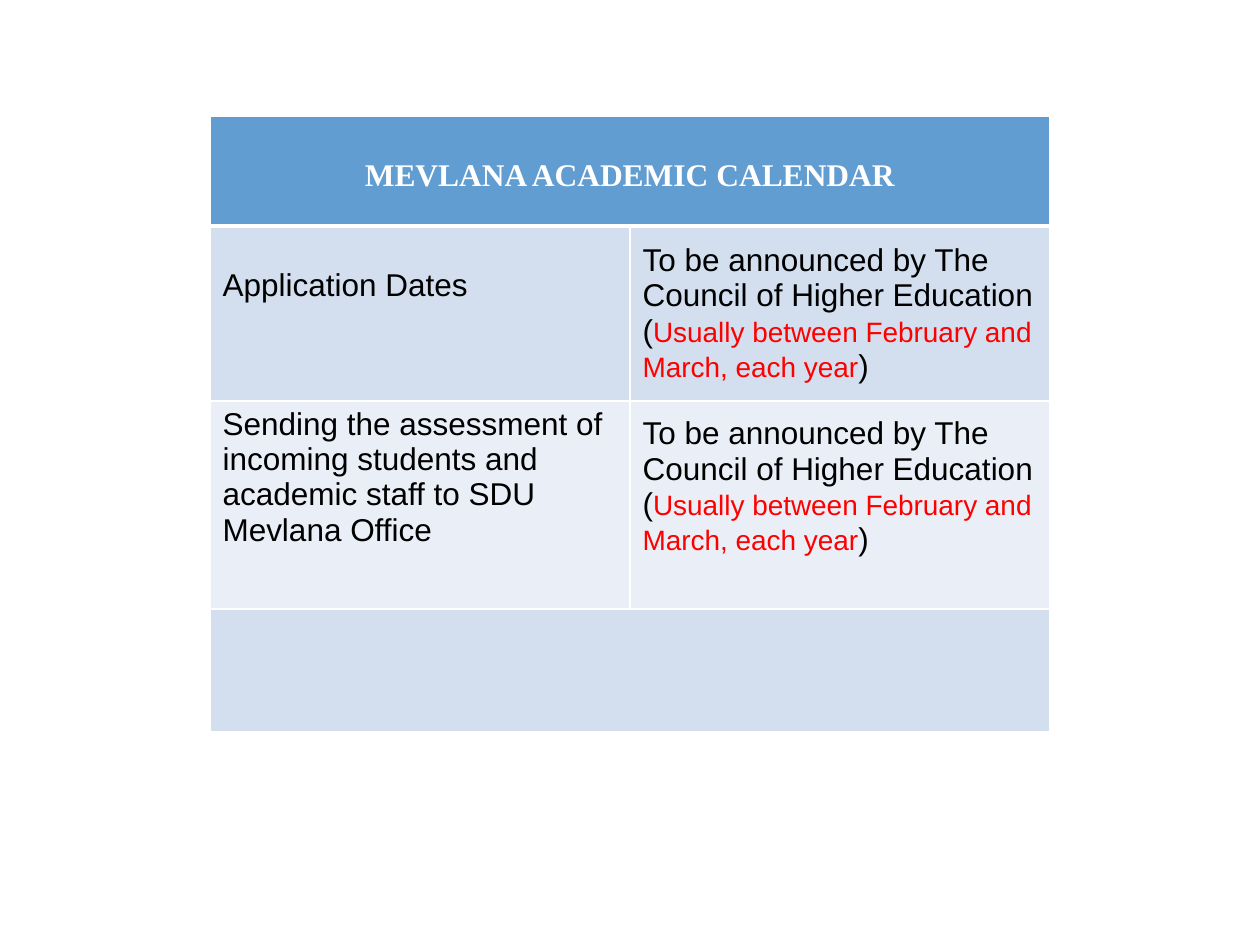
from lxml import etree
from pptx import Presentation
from pptx import util as u
from pptx.dml.color import RGBColor
from pptx.enum import text
from pptx.oxml.ns import qn

PX = 914400 / 126

WHITE = RGBColor(0xFF, 0xFF, 0xFF)
BLACK = RGBColor(0x00, 0x00, 0x00)
RED = RGBColor(0xFF, 0x00, 0x00)
HEADER = RGBColor(0x62, 0x9D, 0xD1)
BAND_DARK = RGBColor(0xD3, 0xDF, 0xEE)
BAND_LIGHT = RGBColor(0xEA, 0xEF, 0xF7)

COLUMNS = (420, 420)
ROWS = (110, 175, 208, 123)
FILLS = (HEADER, BAND_DARK, BAND_LIGHT, BAND_DARK)
PAD = 6
LINE = 36  # height of one 18 pt line


def px(n):
    return u.Emu(round(n * PX))


def set_borders(cell, bottom=1):
    """Draw white lines on the four sides, widths in points."""
    pr = cell._tc.get_or_add_tcPr()
    sides = (("lnL", 1), ("lnR", 1), ("lnT", 1), ("lnB", bottom))
    for i, (side, width) in enumerate(sides):
        ln = etree.Element(qn("a:" + side), w=str(u.Pt(width)))
        fill = etree.SubElement(ln, qn("a:solidFill"))
        etree.SubElement(fill, qn("a:srgbClr"), val=str(WHITE))
        pr.insert(i, ln)


def set_font(p, name="Arial", color=BLACK, bold=False):
    p.font.name = name
    p.font.size = u.Pt(18)
    p.font.bold = bold
    p.font.color.rgb = color


def write_label(cell, label, **font):
    p = cell.text_frame.paragraphs[0]
    p.add_run().text = label
    set_font(p, **font)
    return p


def write_announcement(cell):
    """Announcement line, then the usual period in red brackets."""
    cell.vertical_anchor = text.MSO_ANCHOR.MIDDLE
    write_label(cell, "To be announced by The Council of Higher Education")
    p = cell.text_frame.add_paragraph()
    set_font(p)
    for part in ("(", "Usually between February and March, each year", ")"):
        r = p.add_run()
        r.text = part
        r.font.color.rgb = BLACK
        if len(part) > 1:
            r.font.size = u.Pt(16)
            r.font.color.rgb = RED


def add_calendar(s):
    frame = s.shapes.add_table(len(ROWS), len(COLUMNS), px(210), px(116),
                               px(sum(COLUMNS)), px(sum(ROWS)))
    table = frame.table
    table.first_row = table.horz_banding = False
    for column, width in zip(table.columns, COLUMNS):
        column.width = px(width)
    for i, (row, height, fill) in enumerate(zip(table.rows, ROWS, FILLS)):
        row.height = px(height)
        for cell in row.cells:
            cell.fill.solid()
            cell.fill.fore_color.rgb = fill
            cell.margin_top = cell.margin_bottom = px(PAD)
            set_borders(cell, bottom=3 if i == 0 else 1)
    # Header and closing row span both columns
    for i in (0, len(ROWS) - 1):
        table.cell(i, 0).merge(table.cell(i, 1))
    return table


def main():
    prs = Presentation()
    prs.slide_width, prs.slide_height = u.Inches(10), u.Inches(7.5)
    s = prs.slides.add_slide(prs.slide_layouts[6])
    table = add_calendar(s)

    # Header
    title = table.cell(0, 0)
    p = write_label(title, "MEVLANA ACADEMIC CALENDAR",
                    name="Times New Roman", color=WHITE, bold=True)
    p.alignment = text.PP_ALIGN.CENTER

    # Events and dates
    dates = table.cell(1, 0)
    write_label(dates, "Application Dates")
    write_label(table.cell(2, 0), "Sending the assessment of incoming students "
                "and academic staff to SDU Mevlana Office")
    for i in (1, 2):
        write_announcement(table.cell(i, 1))

    # One line of room above or below the text
    for cell in (title, dates):
        cell.margin_top = px(PAD + LINE)
    table.cell(2, 1).margin_bottom = px(PAD + LINE)

    prs.save("out.pptx")


if __name__ == "__main__":
    main()
